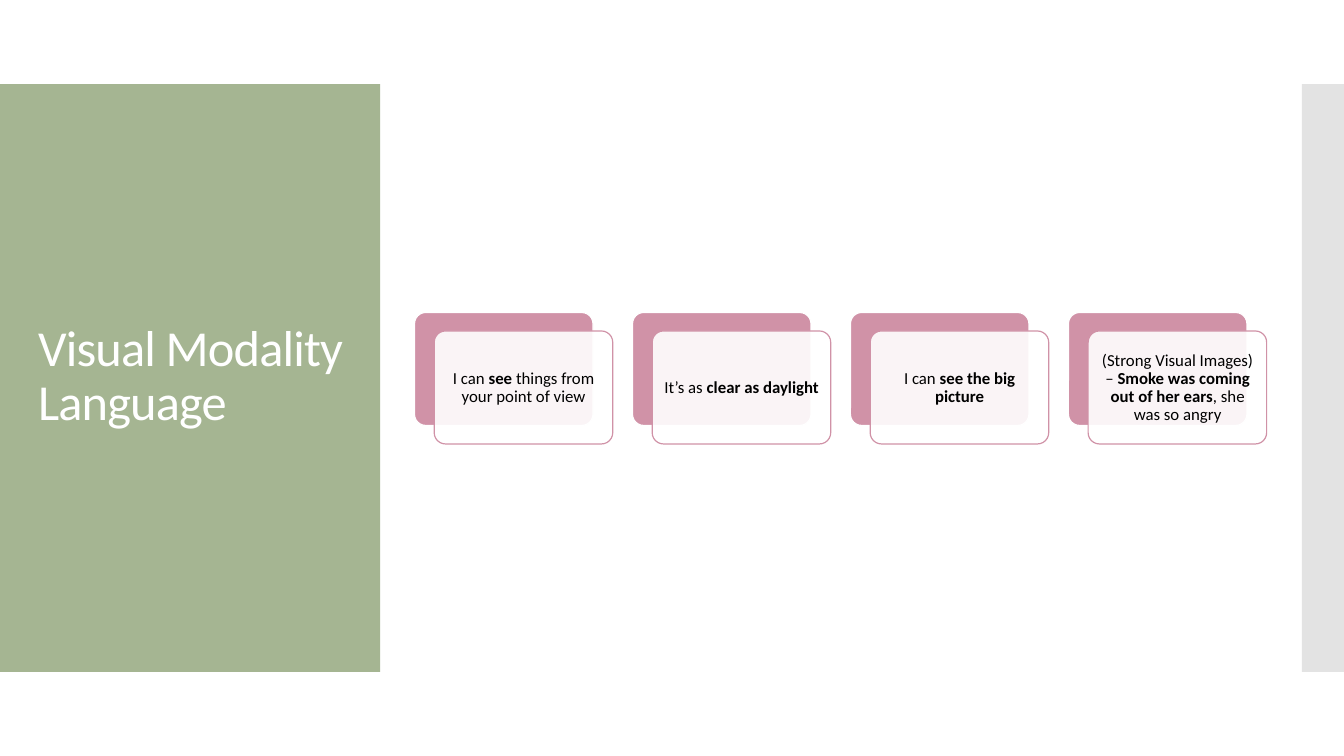
from typing import NamedTuple

from pptx import Presentation, util as u
from pptx.dml.color import RGBColor
from pptx.enum import shapes, text
from pptx.oxml.ns import qn
from lxml import etree

SCALE = 3810  # EMU in one px, 240 px to the inch
FONT = "Calibri"
GREEN = RGBColor(0xA5, 0xB5, 0x92)
GREY = RGBColor(0xC8, 0xC8, 0xC8)
ROSE = RGBColor(0xD0, 0x92, 0xA7)
WHITE = RGBColor(0xFF, 0xFF, 0xFF)
BLACK = RGBColor(0x00, 0x00, 0x00)


class Box(NamedTuple):
    x: int
    y: int
    w: int
    h: int

    def move(self, dx: int, dy: int = 0) -> "Box":
        return self._replace(x=self.x + dx, y=self.y + dy)

    def emu(self) -> list[int]:
        return [n * SCALE for n in self]


class Run(NamedTuple):
    words: str
    bold: bool = False


class Style(NamedTuple):
    size: int
    color: RGBColor
    align: text.PP_ALIGN
    inset: int
    track: int = 0  # hundredths of a point


TITLE = Style(36, WHITE, text.PP_ALIGN.LEFT, 24, -60)
QUOTE = Style(12, BLACK, text.PP_ALIGN.CENTER, 12)

BACK = Box(987, 744, 425, 269)
LABEL = Box(1043, 797, 408, 254)
STEP = 519
SHIFT = (47, 44)

CARDS = [
    [Run("I can "), Run("see", True), Run(" things from your point of view")],
    [Run("It’s as "), Run("clear as daylight", True)],
    [Run("I can "), Run("see the big picture", True)],
    [Run("(Strong Visual Images) – "),
     Run("Smoke was coming out of her ears", True),
     Run(", she was so angry")],
]


def add_block(slide, box: Box, fill: RGBColor, alpha: int = 100,
              line: RGBColor | None = None):
    """Draw a plain rectangle, or a rounded one when a line colour is given."""
    kind = shapes.MSO_SHAPE
    shape = slide.shapes.add_shape(
        kind.ROUNDED_RECTANGLE if line else kind.RECTANGLE, *box.emu())
    shape.shadow.inherit = False
    shape.fill.solid()
    shape.fill.fore_color.rgb = fill
    if alpha < 100:
        tint = shape.fill._xPr.find(".//" + qn("a:srgbClr"))
        etree.SubElement(tint, qn("a:alpha"), val=str(alpha * 1000))
    if line:
        shape.adjustments[0] = 0.1
        shape.line.color.rgb = line
        shape.line.width = u.Pt(0.85)
    else:
        shape.line.fill.background()


def add_text(slide, box: Box, runs: list[Run], style: Style) -> None:
    frame = slide.shapes.add_textbox(*box.emu()).text_frame
    frame.word_wrap = True
    frame.vertical_anchor = text.MSO_ANCHOR.MIDDLE
    frame.margin_left = frame.margin_right = style.inset * SCALE
    frame.margin_top = frame.margin_bottom = 12 * SCALE
    para = frame.paragraphs[0]
    para.alignment = style.align
    para.line_spacing = 0.9
    for part in runs:
        run = para.add_run()
        run.text = part.words
        font = run.font
        font.name = FONT
        font.size = u.Pt(style.size)
        font.bold = part.bold
        font.color.rgb = style.color
        if style.track:
            font._element.set("spc", str(style.track))


def add_card(slide, col: int, runs: list[Run]) -> None:
    back = BACK.move(col * STEP)
    add_block(slide, back, ROSE, line=WHITE)
    add_block(slide, back.move(*SHIFT), WHITE, 90, ROSE)
    add_text(slide, LABEL.move(col * STEP), runs, QUOTE)


def main() -> None:
    deck = Presentation()
    deck.slide_width, deck.slide_height = 3200 * SCALE, 1800 * SCALE
    slide = deck.slides.add_slide(deck.slide_layouts[6])
    add_block(slide, Box(0, 200, 905, 1400), GREEN)
    add_block(slide, Box(3100, 200, 100, 1400), GREY, 50)
    add_text(slide, Box(67, 295, 773, 1207),
             [Run("Visual Modality Language")], TITLE)
    for col, runs in enumerate(CARDS):
        add_card(slide, col, runs)
    deck.save("out.pptx")


if __name__ == "__main__":
    main()
